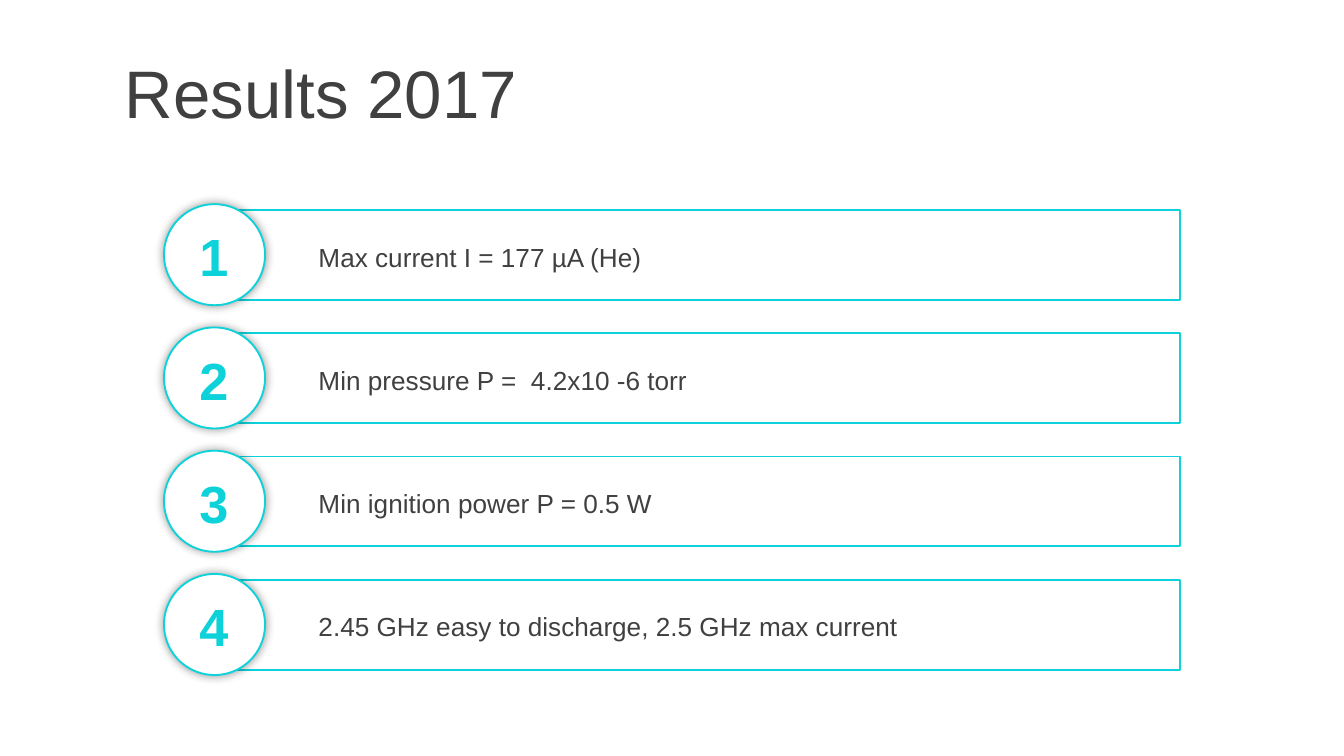
from lxml import etree
from pptx import Presentation, util as u
from pptx.dml.color import RGBColor
from pptx.enum import shapes, text
from pptx.oxml import ns

CYAN = RGBColor(0x0D, 0xD2, 0xD9)
GRAY = RGBColor(0x40, 0x40, 0x40)
WHITE = RGBColor(0xFF, 0xFF, 0xFF)

RESULTS = [
    "Max current I = 177 µA (He)",
    "Min pressure P =  4.2x10 -6 torr",
    "Min ignition power P = 0.5 W",
    "2.45 GHz easy to discharge, 2.5 GHz max current",
]
TOP = 3.86
PITCH = 2.33


def write(tf, words, size=14, color=GRAY, bold=False, align=text.PP_ALIGN.LEFT):
    p = tf.paragraphs[0]
    p.alignment = align
    r = p.add_run()
    r.text = words
    r.font.name = "Arial"
    r.font.size = u.Pt(size)
    r.font.bold = bold
    r.font.color.rgb = color


class Deck:
    def __init__(self, s):
        self.s = s

    def label(self, words, left, top, width, height, **fmt):
        box = self.s.shapes.add_textbox(
            u.Cm(left), u.Cm(top), u.Cm(width), u.Cm(height))
        tf = box.text_frame
        tf.word_wrap = True
        tf.vertical_anchor = text.MSO_ANCHOR.MIDDLE
        write(tf, words, **fmt)

    def outline(self, kind, left, top, width, height):
        sp = self.s.shapes.add_shape(
            kind, u.Cm(left), u.Cm(top), u.Cm(width), u.Cm(height))
        sp.fill.background()
        sp.line.color.rgb = CYAN
        sp.line.width = u.Pt(1)
        sp.shadow.inherit = False
        return sp

    def bar(self, top):
        self.outline(shapes.MSO_SHAPE.RECTANGLE, 4.04, top, 18.26, 1.7)

    def badge(self, top):
        sp = self.outline(shapes.MSO_SHAPE.OVAL, 3.1, top, 1.91, 1.91)
        sp.fill.solid()
        sp.fill.fore_color.rgb = WHITE
        effects = sp._element.spPr.find(ns.qn("a:effectLst"))
        glow = etree.SubElement(effects, ns.qn("a:outerShdw"),
                                blurRad=str(u.Pt(5)), dist="0", dir="0",
                                algn="ctr", rotWithShape="0")
        black = etree.SubElement(glow, ns.qn("a:srgbClr"), val="000000")
        etree.SubElement(black, ns.qn("a:alpha"), val="40000")

    def result(self, number, words, top):
        self.bar(top + 0.11)
        self.label(words, 5.77, top + 0.56, 15.95, 0.86)
        self.badge(top)
        self.label(str(number), 3.45, top + 0.26, 1.19, 1.44, size=28,
                   color=CYAN, bold=True, align=text.PP_ALIGN.CENTER)


def main():
    prs = Presentation()
    prs.slide_width = u.Cm(25.4)
    prs.slide_height = u.Cm(14.29)
    deck = Deck(prs.slides.add_slide(prs.slide_layouts[6]))
    deck.label("Results 2017", 2.11, 0.94, 23.29, 1.6, size=36)
    for i, words in enumerate(RESULTS):
        deck.result(i + 1, words, TOP + i * PITCH)
    prs.save("out.pptx")


if __name__ == "__main__":
    main()
